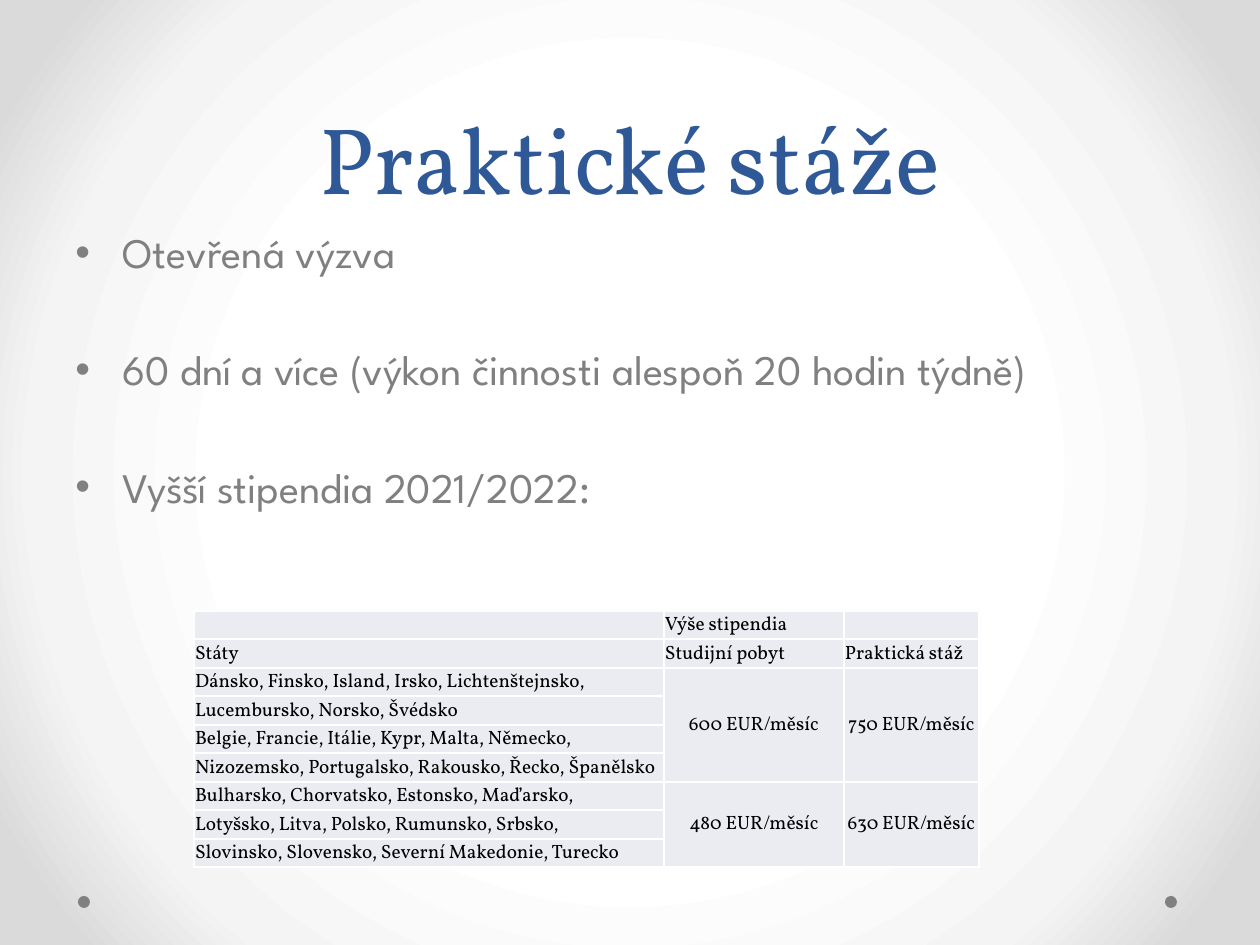
"""Build a slide about practical internships with a scholarship table."""
import lxml.etree
import pptx
import pptx.dml.color
import pptx.enum.shapes
import pptx.enum.text
import pptx.oxml.ns
import pptx.util

SCALE = 914400 / 126
COLORS = {"title": "2F5897", "gray": "808080", "cell": "EAECF2",
          "border": "FFFFFF", "black": "000000"}
GRADIENT = {50: "FFFFFF", 76: "F4F4F4", 92: "DADADA"}
ALIGN = pptx.enum.text.PP_ALIGN
ANCHOR = pptx.enum.text.MSO_ANCHOR


def px(*lengths):
    return [pptx.util.Emu(round(length * SCALE)) for length in lengths]


def add_element(parent, tag, **attributes):
    element = lxml.etree.SubElement(parent, pptx.oxml.ns.qn(tag))
    for name, value in attributes.items():
        element.set(name, str(value))
    return element


presentation = pptx.Presentation()
presentation.slide_width, presentation.slide_height = px(1260, 945)
slide = presentation.slides.add_slide(presentation.slide_layouts[6])

slide.background.fill.gradient()
gradient = next(slide.element.iter(pptx.oxml.ns.qn("a:gradFill")))
gradient.clear()
stops = add_element(gradient, "a:gsLst")
for position, color in GRADIENT.items():
    stop = add_element(stops, "a:gs", pos=position * 1000)
    add_element(stop, "a:srgbClr", val=color)
circle = add_element(gradient, "a:path", path="circle")
add_element(circle, "a:fillToRect", l=50000, t=50000, r=50000, b=50000)

for left in (78, 1165):
    dot = slide.shapes.add_shape(pptx.enum.shapes.MSO_SHAPE.OVAL, *px(left, 896, 12, 12))
    dot.shadow.inherit = False
    dot.fill.solid()
    dot.fill.fore_color.rgb = pptx.dml.color.RGBColor.from_string(COLORS["gray"])
    dot.line.fill.background()

text_blocks = [
    {"box": (63, 0, 1134, 220), "lines": ["Praktické stáže"], "anchor": ANCHOR.BOTTOM,
     "font": {"name": "Vollkorn", "size": pptx.util.Pt(54)}, "color": "title", "bullet": False,
     "paragraph": {"alignment": ALIGN.CENTER, "line_spacing": pptx.util.Pt(58)}},
    {"box": (63, 220, 1134, 624), "anchor": ANCHOR.TOP,
     "lines": ["Otevřená výzva", "60 dní a více (výkon činnosti alespoň 20 hodin týdně)",
               "Vyšší stipendia 2021/2022:"],
     "font": {"name": "League Spartan", "size": pptx.util.Pt(24)}, "color": "gray", "bullet": True,
     "paragraph": {"alignment": ALIGN.LEFT, "line_spacing": pptx.util.Pt(29)}},
]
for block in text_blocks:
    frame = slide.shapes.add_textbox(*px(*block["box"])).text_frame
    frame.word_wrap = True
    frame.vertical_anchor = block["anchor"]
    frame.text = "\n".join(block["lines"])
    for index, paragraph in enumerate(frame.paragraphs):
        for name, value in block["paragraph"].items():
            setattr(paragraph, name, value)
        if index:
            paragraph.space_before = pptx.util.Pt(38)
        font = paragraph.runs[0].font
        for name, value in block["font"].items():
            setattr(font, name, value)
        font.color.rgb = pptx.dml.color.RGBColor.from_string(COLORS[block["color"]])
        if block["bullet"]:
            properties = paragraph._p.get_or_add_pPr()
            properties.set("marL", "342900")
            properties.set("indent", "-342900")
            add_element(properties, "a:buFont", typeface="Arial")
            add_element(properties, "a:buChar", char="•")

rows = [
    ["", "Výše stipendia", ""],
    ["Státy", "Studijní pobyt", "Praktická stáž"],
    ["Dánsko, Finsko, Island, Irsko, Lichtenštejnsko,", "600 EUR/měsíc", "750 EUR/měsíc"],
    ["Lucembursko, Norsko, Švédsko"],
    ["Belgie, Francie, Itálie, Kypr, Malta, Německo,"],
    ["Nizozemsko, Portugalsko, Rakousko, Řecko, Španělsko"],
    ["Bulharsko, Chorvatsko, Estonsko, Maďarsko,", "480 EUR/měsíc", "630 EUR/měsíc"],
    ["Lotyšsko, Litva, Polsko, Rumunsko, Srbsko,"],
    ["Slovinsko, Slovensko, Severní Makedonie, Turecko"],
]
column_widths = px(470, 180, 135)
table = slide.shapes.add_table(len(rows), 3, *px(194, 611, 785, 256)).table
table.first_row = table.horz_banding = False
for column, width in zip(table.columns, column_widths):
    column.width = width
for index, row in enumerate(table.rows):
    row.height = px(28 + index % 2)[0]

margin = px(1)[0]
cell_format = {"margin_left": margin, "margin_right": margin, "margin_top": margin,
               "margin_bottom": 0}
for row_index, texts in enumerate(rows):
    for column_index in range(3):
        cell = table.cell(row_index, column_index)
        centered = column_index > 0 and row_index > 1
        for name, value in cell_format.items():
            setattr(cell, name, value)
        cell.vertical_anchor = ANCHOR.MIDDLE if centered else ANCHOR.BOTTOM
        properties = cell._tc.get_or_add_tcPr()
        for side in ("a:lnL", "a:lnR", "a:lnT", "a:lnB"):
            line = add_element(properties, side, w=12700)
            add_element(add_element(line, "a:solidFill"), "a:srgbClr", val=COLORS["border"])
        cell.fill.solid()
        cell.fill.fore_color.rgb = pptx.dml.color.RGBColor.from_string(COLORS["cell"])
        paragraph = cell.text_frame.paragraphs[0]
        paragraph.alignment = ALIGN.CENTER if centered else ALIGN.LEFT
        if column_index < len(texts) and texts[column_index]:
            run = paragraph.add_run()
            run.text = texts[column_index]
            run.font.name = "Vollkorn"
            run.font.size = pptx.util.Pt(11)
            run.font.color.rgb = pptx.dml.color.RGBColor.from_string(COLORS["black"])
        else:
            add_element(paragraph._p, "a:endParaRPr", sz=1100)

for first_row, last_row in ((2, 5), (6, 8)):
    for column_index in (1, 2):
        table.cell(first_row, column_index).merge(table.cell(last_row, column_index))

presentation.save("out.pptx")
